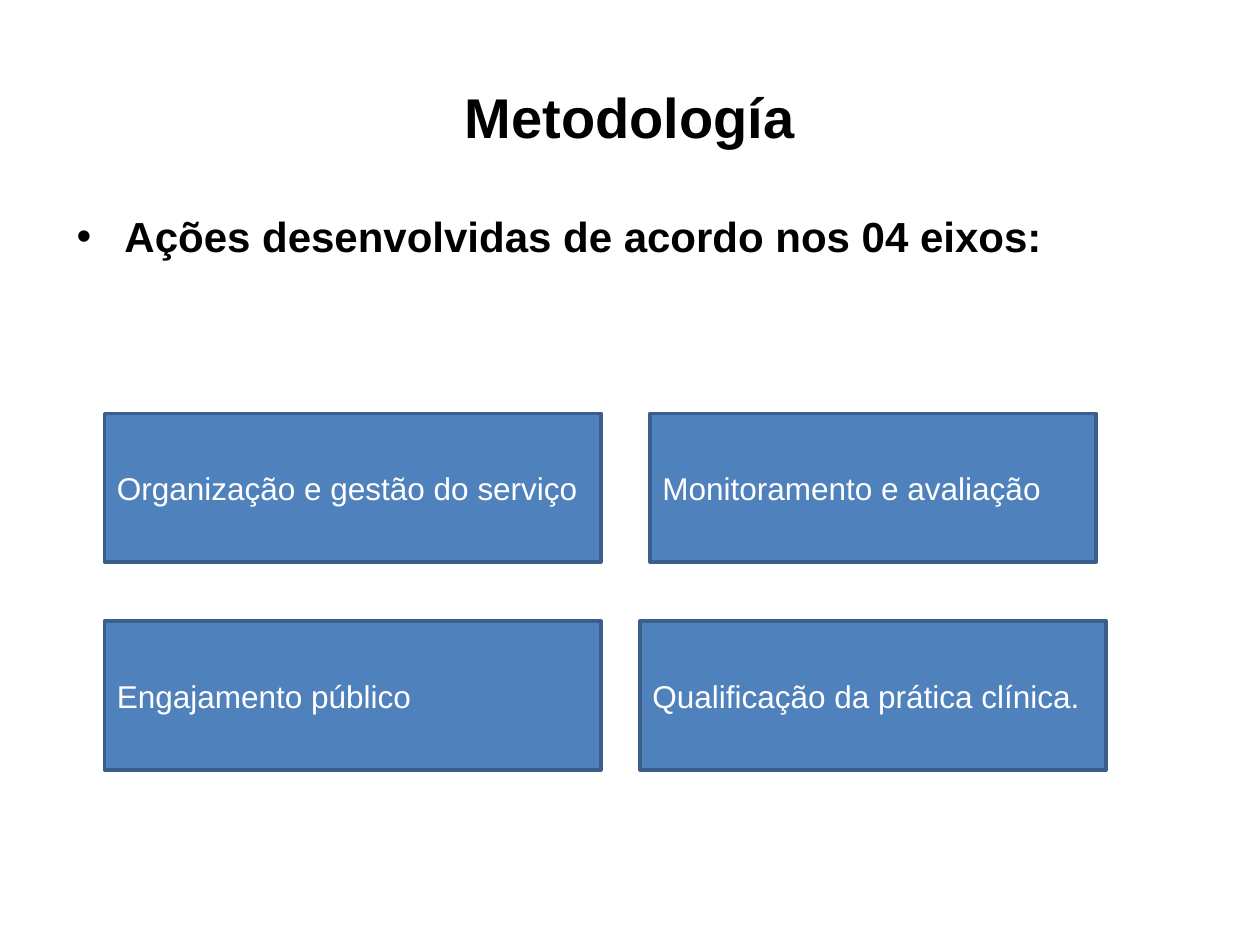
from dataclasses import dataclass

from lxml import etree
from pptx import Presentation
from pptx.dml.color import RGBColor
from pptx.enum.shapes import MSO_SHAPE
from pptx.enum.text import MSO_ANCHOR, PP_ALIGN
from pptx.oxml.ns import qn
from pptx.util import Inches, Pt

RECT = MSO_SHAPE.RECTANGLE
TOP, MIDDLE = MSO_ANCHOR.TOP, MSO_ANCHOR.MIDDLE
LEFT, CENTER = PP_ALIGN.LEFT, PP_ALIGN.CENTER
WIDE, HIGH = Inches(10), Inches(7.5)
COLS, ROWS = 100, 75


@dataclass(frozen=True)
class Theme:
    font: str = "Arial"
    ink: str = "000000"
    pale: str = "FFFFFF"
    fill: str = "4F81BD"
    edge: str = "3A5F8C"
    line: float = 2
    title: int = 32
    lead: int = 24
    label: int = 18


@dataclass(frozen=True)
class Area:
    """Left, top, width and height in grid columns and rows."""
    col: float
    row: float
    wide: float
    high: float

    def box(self) -> tuple[int, int, int, int]:
        x, y = WIDE / COLS, HIGH / ROWS
        return (round(self.col * x), round(self.row * y),
                round(self.wide * x), round(self.high * y))


@dataclass(frozen=True)
class Axis:
    text: str
    mid: float
    wide: float
    row: int


THEME = Theme()
TITLE = Area(5, 3, 90, 12.5)
BODY = Area(5.1, 16.2, 90, 49.5)
CARD_TOP, CARD_HIGH, CARD_STEP = 32.8, 11.8, 16.5
LEFT_MID, RIGHT_MID = 28, 69.3
AXES = (
    Axis("Organização e gestão do serviço", LEFT_MID, 39.4, 0),
    Axis("Monitoramento e avaliação", RIGHT_MID, 35.4, 0),
    Axis("Engajamento público", LEFT_MID, 39.4, 1),
    Axis("Qualificação da prática clínica.", RIGHT_MID, 37, 1),
)


def write(shape, text: str, size: int, color: str, bold=False,
          align=LEFT, anchor=MIDDLE):
    frame = shape.text_frame
    frame.word_wrap = True
    frame.vertical_anchor = anchor
    para = frame.paragraphs[0]
    para.alignment = align
    run = para.add_run()
    run.text = text
    style = {"name": THEME.font, "size": Pt(size), "bold": bold}
    for key, value in style.items():
        setattr(run.font, key, value)
    run.font.color.rgb = RGBColor.from_string(color)
    return para


def add_bullet(para, indent: float) -> None:
    para.space_before = Pt(THEME.lead * 0.2)
    props = para._p.get_or_add_pPr()
    props.set("marL", str(Inches(indent)))
    props.set("indent", str(-Inches(indent)))
    etree.SubElement(props, qn("a:buFont"), typeface=THEME.font)
    etree.SubElement(props, qn("a:buChar"), char="•")


def add_card(slide, axis: Axis) -> None:
    area = Area(axis.mid - axis.wide / 2, CARD_TOP + axis.row * CARD_STEP,
                axis.wide, CARD_HIGH)
    card = slide.shapes.add_shape(RECT, *area.box())
    card.shadow.inherit = False
    card.fill.solid()
    card.fill.fore_color.rgb = RGBColor.from_string(THEME.fill)
    card.line.color.rgb = RGBColor.from_string(THEME.edge)
    card.line.width = Pt(THEME.line)
    write(card, axis.text, THEME.label, THEME.pale)


def main() -> None:
    deck = Presentation()
    deck.slide_width, deck.slide_height = WIDE, HIGH
    slide = deck.slides.add_slide(deck.slide_layouts[6])
    write(slide.shapes.add_textbox(*TITLE.box()), "Metodología",
          THEME.title, THEME.ink, bold=True, align=CENTER)
    lead = write(slide.shapes.add_textbox(*BODY.box()),
                 "Ações desenvolvidas de acordo nos 04 eixos:",
                 THEME.lead, THEME.ink, bold=True, anchor=TOP)
    add_bullet(lead, 0.38)
    for axis in AXES:
        add_card(slide, axis)
    deck.save("out.pptx")


if __name__ == "__main__":
    main()
